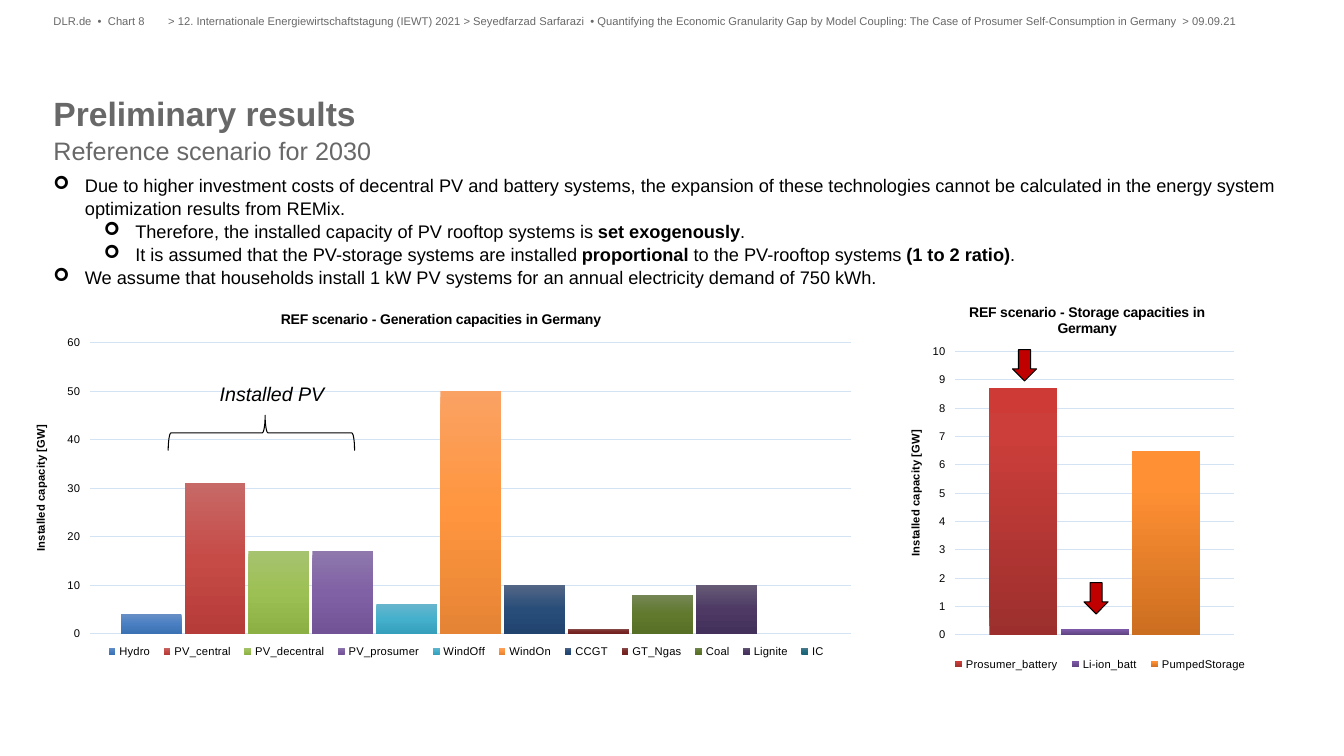
from lxml import etree
from pptx import Presentation
from pptx.chart.data import CategoryChartData
from pptx.dml.color import RGBColor
from pptx.enum.chart import XL_CHART_TYPE, XL_LEGEND_POSITION, XL_TICK_MARK
from pptx.enum.shapes import MSO_SHAPE
from pptx.oxml import parse_xml
from pptx.oxml.ns import nsdecls, qn
from pptx.util import Pt

COLUMNS = XL_CHART_TYPE.COLUMN_CLUSTERED
BOTTOM = XL_LEGEND_POSITION.BOTTOM
OUTSIDE = XL_TICK_MARK.OUTSIDE
DOWN_ARROW, BRACE = MSO_SHAPE.DOWN_ARROW, MSO_SHAPE.LEFT_BRACE
FONT = "Arial"
COLORS = {"black": "000000", "gray": "686868", "red": "C00000", "grid": "D4E3F4"}

PAGE = "DLR.de  •  Chart 8"
HEADER = (
    "> 12. Internationale Energiewirtschaftstagung (IEWT) 2021 > Seyedfarzad Sarfarazi  • "
    "Quantifying the Economic Granularity Gap by Model Coupling: "
    "The Case of Prosumer Self-Consumption in Germany  > 09.09.21"
)
TITLE, SUBTITLE = "Preliminary results", "Reference scenario for 2030"
BULLETS = [
    (0, [("Due to higher investment costs of decentral PV and battery systems, the expansion of "
          "these technologies cannot be calculated in the energy system optimization results "
          "from REMix.", False)]),
    (1, [("Therefore, the installed capacity of PV rooftop systems is ", False),
         ("set exogenously", True), (".", False)]),
    (1, [("It is assumed that the PV-storage systems are installed ", False),
         ("proportional ", True), ("to the PV-rooftop systems ", False),
         ("(1 to 2 ratio)", True), (".", False)]),
    (0, [("We assume that households install 1 kW PV systems for an annual electricity demand "
          "of 750 kWh.", False)]),
]
AXIS_TITLE = "Installed capacity [GW]"
CHARTS = [
    {
        "title": "REF scenario - Generation capacities in Germany",
        "box": (9.4, 205.9, 611.3, 277.2), "top": 60, "step": 10,
        "angle": 90, "stops": (0, 50, 100),
        "plot": (0.09, 0.14, 0.89, 0.75), "legend": (0.1, 0.91, 0.86, 0.05),
        "heading": (0.31, 0.05),
        "series": [
            ("Hydro", 4, "688FC5 4A80C3 3B72B3"),
            ("PV_central", 31, "C76967 C64B47 B63C39"),
            ("PV_decentral", 17, "A6C36F 9DC054 8DB045"),
            ("PV_prosumer", 17, "8E78AC 8061A5 715396"),
            ("WindOff", 6, "66B5CD 45B0CC 36A0BC"),
            ("WindOn", 50, "FAA263 FF953E E58435"),
            ("CCGT", 10, "536686 284D79 20446E"),
            ("GT_Ngas", 1, "885353 7B2926 71211F"),
            ("Coal", 8, "748655 60792D 566F25"),
            ("Lignite", 10, "665B76 4D3964 44315B"),
            ("IC", 0, "517D8C 236D81 1B6376"),
        ],
    },
    {
        "title": "REF scenario - Storage capacities in Germany",
        "box": (635, 209.5, 265.7, 277.2), "top": 10, "step": 1,
        "angle": 270, "stops": (0, 80, 100),
        "plot": (0.18, 0.15, 0.75, 0.73), "legend": (0.15, 0.93, 0.84, 0.05),
        "heading": (0.21, 0.02),
        "series": [
            ("Prosumer_battery", 8.7, "9C2F2D CB3E3A CE3B37"),
            ("Li-ion_batt", 0.2, "5F4480 7B58A6 7C57A8"),
            ("PumpedStorage", 6.5, "CC6E20 FF9034 FF9136"),
        ],
    },
]
ARROWS = [(723.6, 249.8), (774.7, 416.2)]


def style(font, size, color="black", bold=False, italic=False):
    font.name, font.size = FONT, Pt(size)
    font.bold, font.italic = bold, italic
    font.color.rgb = RGBColor.from_string(COLORS[color])


def add_text(p, text, **fmt):
    r = p.add_run()
    r.text = text
    style(r.font, **fmt)


def add_box(s, x, y, w, h, wrap=True):
    tf = s.shapes.add_textbox(Pt(x), Pt(y), Pt(w), Pt(h)).text_frame
    tf.margin_left = tf.margin_right = tf.margin_top = tf.margin_bottom = 0
    tf.word_wrap = wrap
    return tf


def add_bullet(p, level):
    p.level = level
    pPr = p._p.get_or_add_pPr()
    pPr.set("marL", str(Pt(22.5 + 36 * level)))
    pPr.set("indent", str(Pt(-22.5)))
    etree.SubElement(pPr, qn("a:buFont")).set("typeface", "Wingdings")
    etree.SubElement(pPr, qn("a:buChar")).set("char", "➢")
    p.line_spacing = 1.05


def add_shape(s, kind, x, y, w, h, fill=None):
    sp = s.shapes.add_shape(kind, Pt(x), Pt(y), Pt(w), Pt(h))
    sp.shadow.inherit = False
    if fill:
        sp.fill.solid()
        sp.fill.fore_color.rgb = RGBColor.from_string(COLORS[fill])
    else:
        sp.fill.background()
    sp.line.color.rgb = RGBColor.from_string(COLORS["black"])
    sp.line.width = Pt(0.75)
    return sp


def place(parent, index, values, inner=False):
    for old in parent.findall(qn("c:layout")):
        parent.remove(old)
    layout = etree.Element(qn("c:layout"))
    manual = etree.SubElement(layout, qn("c:manualLayout"))
    tags = [("layoutTarget", "inner")] if inner else []
    tags += [("xMode", "edge"), ("yMode", "edge")] + list(zip("xywh", values))
    for tag, value in tags:
        etree.SubElement(manual, qn("c:" + tag)).set("val", str(value))
    parent.insert(index, layout)


def fill_gradient(series, colors, stops, angle):
    series.format.fill.gradient()
    old = series._element.find(".//" + qn("a:gradFill"))
    marks = "".join(f'<a:gs pos="{pos * 1000}"><a:srgbClr val="{color}"/></a:gs>'
                    for pos, color in zip(stops, colors.split()))
    old.getparent().replace(old, parse_xml(
        f'<a:gradFill {nsdecls("a")} rotWithShape="1"><a:gsLst>{marks}</a:gsLst>'
        f'<a:lin ang="{angle * 60000}" scaled="0"/></a:gradFill>'))


def add_chart(s, spec_data):
    data = CategoryChartData()
    data.categories = ["1"]
    for name, value, _ in spec_data["series"]:
        data.add_series(name, [value])
    chart = s.shapes.add_chart(COLUMNS, *map(Pt, spec_data["box"]), data).chart
    style(chart.font, 8)
    add_text(chart.chart_title.text_frame.paragraphs[0], spec_data["title"], size=10, bold=True)
    chart.has_legend = True
    chart.legend.position = BOTTOM
    chart.legend.include_in_layout = False
    style(chart.legend.font, 8)
    plot = chart.plots[0]
    plot.gap_width, plot.overlap, plot.vary_by_categories = 100, -5, False
    for series, (_, _, colors) in zip(plot.series, spec_data["series"]):
        series.invert_if_negative = False
        fill_gradient(series, colors, spec_data["stops"], spec_data["angle"])
    chart.category_axis.visible = False
    axis = chart.value_axis
    axis.minimum_scale, axis.maximum_scale = 0, spec_data["top"]
    axis.major_unit, axis.major_tick_mark = spec_data["step"], OUTSIDE
    axis.format.line.fill.background()
    style(axis.tick_labels.font, 8)
    grid = axis.major_gridlines.format.line
    grid.color.rgb = RGBColor.from_string(COLORS["grid"])
    grid.width = Pt(0.75)
    add_text(axis.axis_title.text_frame.paragraphs[0], AXIS_TITLE, size=8, bold=True)
    place(chart.chart_title._element, 1, spec_data["heading"])
    place(chart.legend._element, 1, spec_data["legend"])
    place(chart._chartSpace.find(".//" + qn("c:plotArea")), 0, spec_data["plot"], inner=True)


def main():
    prs = Presentation()
    prs.slide_width, prs.slide_height = Pt(960.48), Pt(540)
    s = prs.slides.add_slide(prs.slide_layouts[6])
    for chart_data in CHARTS:
        add_chart(s, chart_data)
    for text, x, w in [(PAGE, 38.2, 82), (HEADER, 120.2, 801.4)]:
        add_text(add_box(s, x, 10.1, w, 11.5).paragraphs[0], text, size=8, color="gray")
    tf = add_box(s, 38.2, 64.1, 662.4, 58.3)
    for p, text, size, bold in [(tf.paragraphs[0], TITLE, 24, True),
                                (tf.add_paragraph(), SUBTITLE, 18, False)]:
        p.line_spacing = 1.08
        add_text(p, text, size=size, color="gray", bold=bold)
    tf = add_box(s, 38.2, 123.8, 874, 78.5)
    for i, (level, runs) in enumerate(BULLETS):
        p = tf.add_paragraph() if i else tf.paragraphs[0]
        add_bullet(p, level)
        for text, bold in runs:
            add_text(p, text, size=13, bold=bold)
    for x, y in ARROWS:
        add_shape(s, DOWN_ARROW, x, y, 17.3, 22.3, fill="red")
    brace = add_shape(s, BRACE, 174.2, 242.6, 25.2, 133.2)
    brace.rotation = 90
    brace.adjustments[0], brace.adjustments[1] = 0.08, 0.48
    label = add_box(s, 157, 272.9, 75.6, 17.3, wrap=False)
    add_text(label.paragraphs[0], "Installed PV", size=14, italic=True)
    prs.save("out.pptx")


if __name__ == "__main__":
    main()
